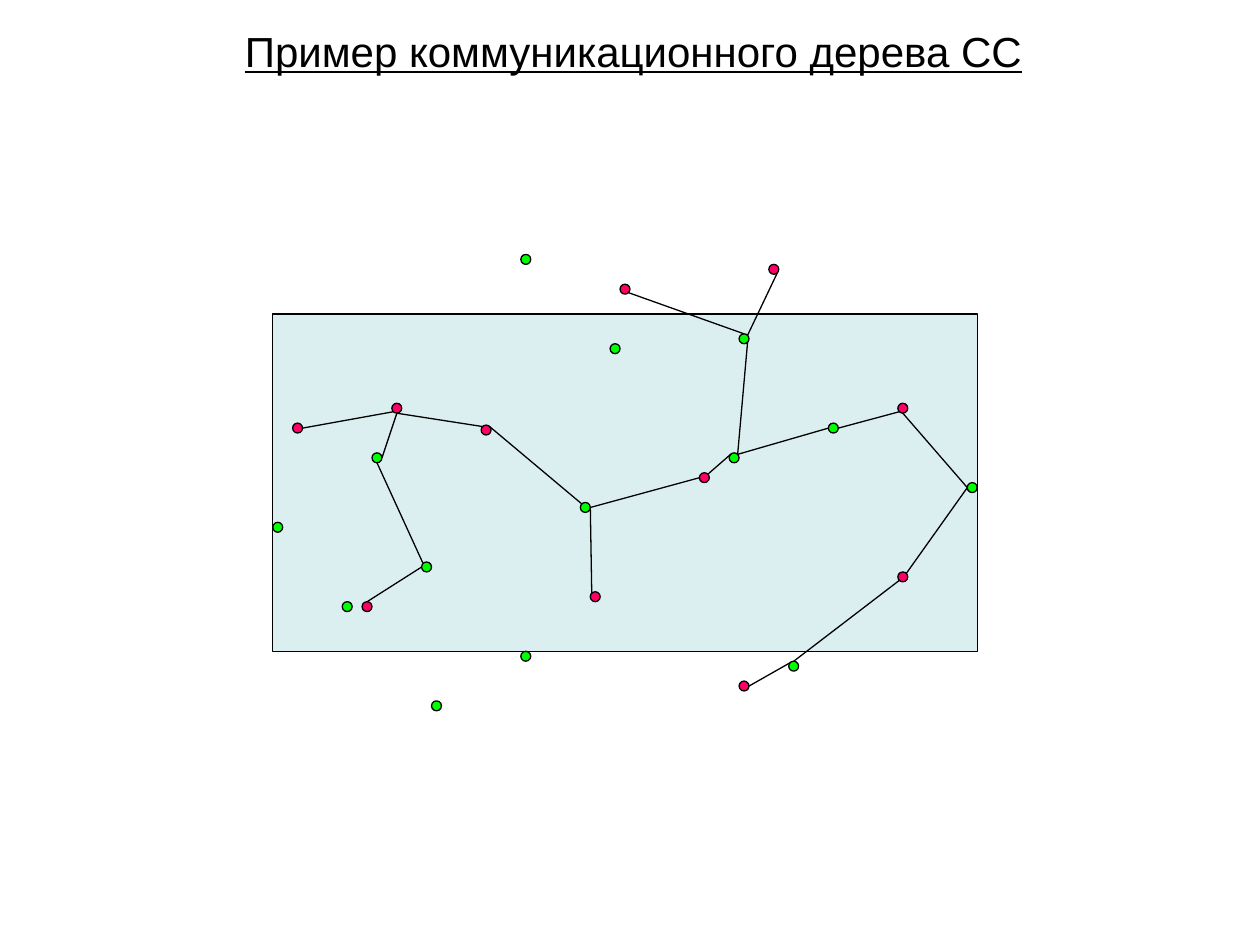
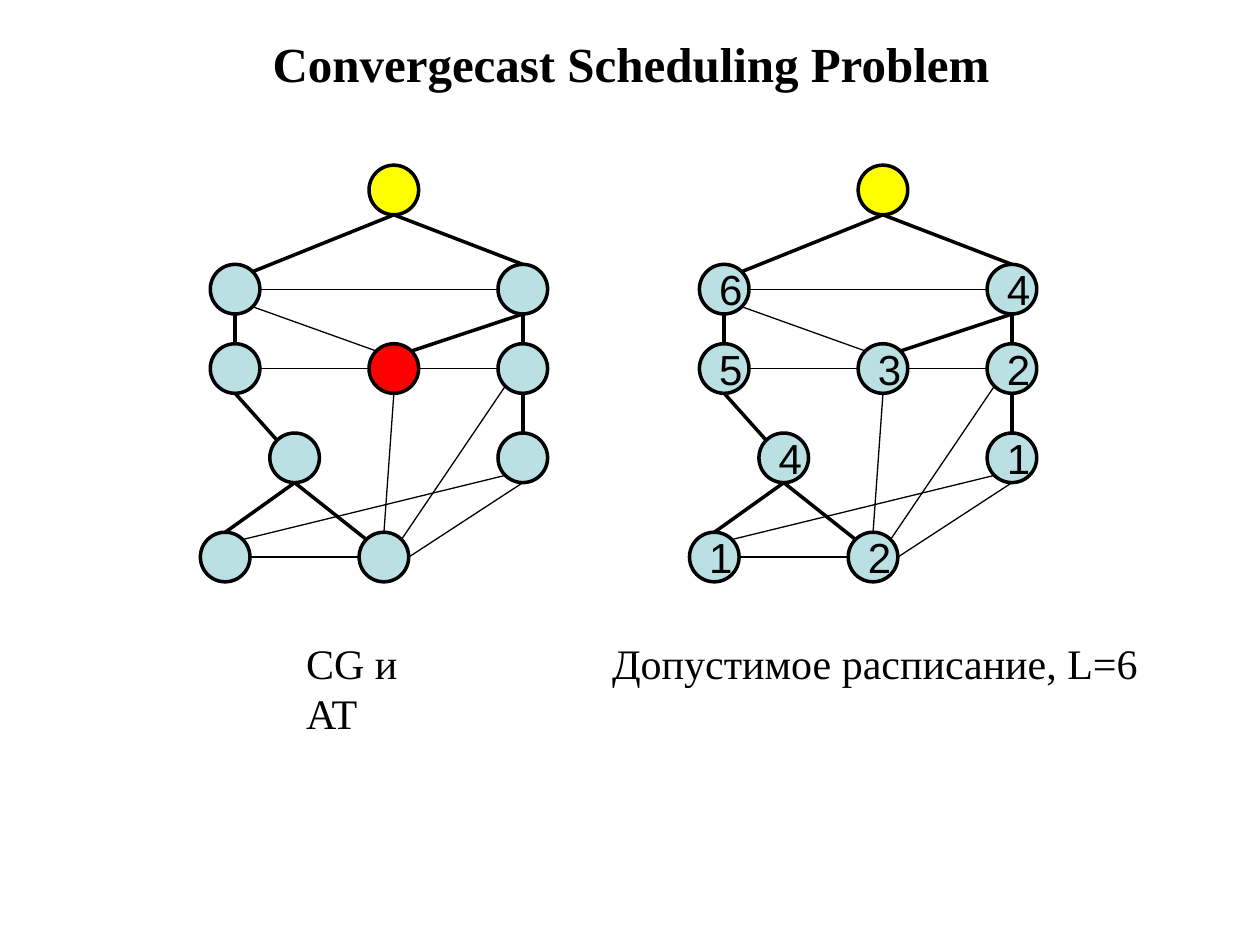
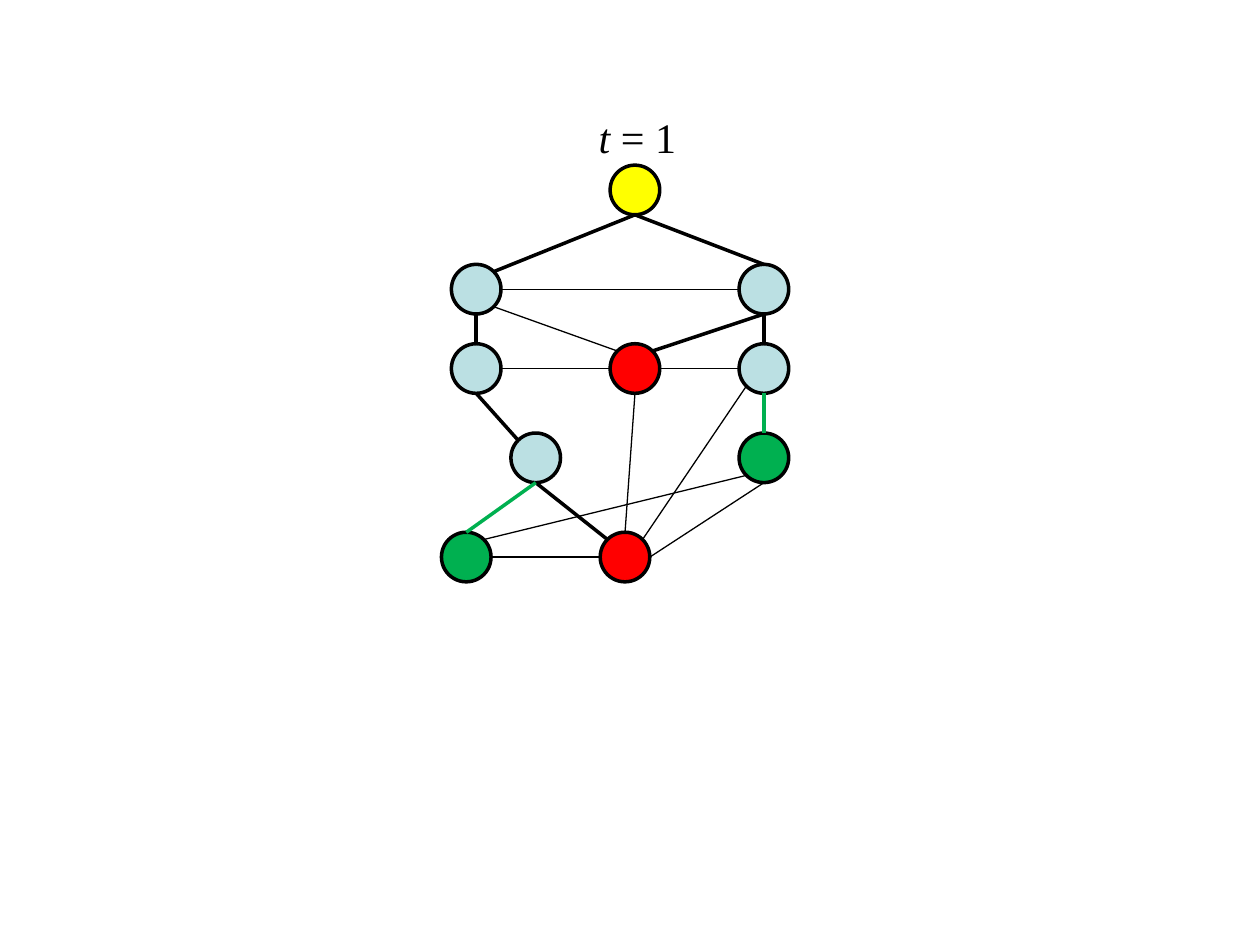
import dataclasses
import math

import lxml.etree
import pptx
import pptx.dml.color
import pptx.enum.shapes
import pptx.enum.text
import pptx.oxml.ns
import pptx.util

SHAPE = pptx.enum.shapes.MSO_SHAPE
ALIGN = pptx.enum.text.PP_ALIGN
QN = pptx.oxml.ns.qn


# Colours, fonts and sizes
@dataclasses.dataclass(frozen=True)
class Theme:
    ink: str = "000000"
    pale: str = "BBE0E3"
    pink: str = "FF0066"
    lime: str = "00FF00"
    red: str = "FF0000"
    green: str = "00B050"
    yellow: str = "FFFF00"
    sans: str = "Arial"
    serif: str = "Times New Roman"
    text: int = 24
    head: int = 28
    thin: float = 0.75
    thick: float = 2


# Eight points on the rim of a circle, as angles from the east
RIM = {name: math.radians(45 * step) for step, name in
       enumerate(("e", "se", "s", "sw", "w", "nw", "n", "ne"))}


class Deck:
    """Style, current slide and a grid of square cells, 127 across."""

    def __init__(self, theme):
        self.theme = theme
        self.show = pptx.Presentation()
        self.show.slide_width = pptx.util.Inches(10)
        self.show.slide_height = pptx.util.Inches(7.5)
        self.cell = self.show.slide_width / 127
        self.slide = None

    def grid(self, *cells):
        return [round(count * self.cell) for count in cells]

    def tint(self, name):
        return pptx.dml.color.RGBColor.from_string(name)

    def page(self):
        self.slide = self.show.slides.add_slide(self.show.slide_layouts[5])

    def font(self, para, face, size):
        para.font.name = face
        para.font.size = pptx.util.Pt(size)
        para.font.color.rgb = self.tint(self.theme.ink)

    def title(self, box, text, face, size, bold=False, under=False, slant=""):
        """Set the title; the opening words in slant are italic."""
        shape = self.slide.shapes.title
        shape.left, shape.top, shape.width, shape.height = self.grid(*box)
        frame = shape.text_frame
        frame.word_wrap = False
        frame.auto_size = pptx.enum.text.MSO_AUTO_SIZE.NONE
        frame.vertical_anchor = pptx.enum.text.MSO_ANCHOR.TOP
        para = frame.paragraphs[0]
        para.alignment = ALIGN.CENTER
        self.font(para, face, size)
        para.font.bold, para.font.underline = bold, under
        if slant:
            run = para.add_run()
            run.text, run.font.italic = slant, True
        para.add_run().text = text

    def label(self, box, text):
        frame = self.slide.shapes.add_textbox(*self.grid(*box)).text_frame
        frame.word_wrap = True
        frame.text = text
        self.font(frame.paragraphs[0], self.theme.serif, self.theme.text)

    def shape(self, kind, box, fill, width, text="", alpha=None):
        shape = self.slide.shapes.add_shape(kind, *self.grid(*box))
        shape.shadow.inherit = False
        shape.fill.solid()
        shape.fill.fore_color.rgb = self.tint(fill)
        shape.line.color.rgb = self.tint(self.theme.ink)
        shape.line.width = pptx.util.Pt(width)
        if alpha:
            tone = shape.fill._xPr.find(".//" + QN("a:srgbClr"))
            lxml.etree.SubElement(tone, QN("a:alpha"), val=str(alpha * 1000))
        if text:
            para = shape.text_frame.paragraphs[0]
            para.text = text
            para.alignment = ALIGN.CENTER
            self.font(para, self.theme.sans, self.theme.text)

    def line(self, start, end, width, hue):
        link = self.slide.shapes.add_connector(
            pptx.enum.shapes.MSO_CONNECTOR.STRAIGHT,
            *self.grid(*start, *end))
        link.line.color.rgb = self.tint(hue)
        link.line.width = pptx.util.Pt(width)
        lxml.etree.SubElement(link._element.spPr, QN("a:effectLst"))

    def nodes(self, origin, spots, size, fills, width, marks=None):
        """Draw circles and return the places of their corners."""
        corners = {}
        for name, (col, row) in spots.items():
            corners[name] = (origin[0] + col, origin[1] + row)
            self.shape(SHAPE.OVAL, (*corners[name], size, size),
                       fills[name], width, (marks or {}).get(name, ""))
        return corners

    def links(self, corners, size, edges, width, lit=()):
        """Join rim points, each written as node.side."""
        for edge in edges:
            ends = []
            for stop in edge.split():
                name, side = stop.split(".")
                left, top = corners[name]
                ends.append((left + size / 2 * (1 + math.cos(RIM[side])),
                             top + size / 2 * (1 + math.sin(RIM[side]))))
            hue = self.theme.green if edge in lit else self.theme.ink
            self.line(*ends, width, hue)


# Sensor field: p nodes are pink, g nodes are lime
FIELD = {
    "p1": (9, 35), "p2": (2, 17), "p3": (12, 15), "p4": (32, 34),
    "p5": (21, 17.2), "p6": (35, 3), "p7": (43, 22), "p8": (50, 1),
    "p9": (47, 43), "p10": (63, 32), "p11": (63, 15),
    "g1": (7, 35), "g2": (15, 31), "g3": (10, 20), "g4": (16, 45),
    "g5": (25, 40), "g6": (70, 23), "g7": (34, 9), "g8": (25, 0),
    "g9": (46, 20), "g10": (0, 27), "g11": (52, 41), "g12": (56, 17),
    "g13": (47, 8), "g14": (31, 25),
}
BRANCH = (
    "p3.s p5.nw", "p2.e p3.sw", "p4.nw g14.e", "g2.w p1.n",
    "g14.nw p5.ne", "g11.n p10.sw", "g13.n p6.se", "g13.ne p8.se",
    "g9.nw p7.ne", "p11.s g6.w", "g3.s g2.nw", "p3.s g3.e",
    "g13.se g9.ne", "g12.w g9.ne", "g12.e p11.sw", "g6.w p10.ne",
    "p9.e g11.nw", "g14.e p7.w",
)

# Conflict graph: tree edges are thick, conflict edges thin
GRAPH = {
    "root": (17, 0), "b": (1, 10), "c": (30, 10), "d": (1, 18),
    "e": (17, 18), "f": (30, 18), "g": (7, 27), "h": (30, 27),
    "i": (0, 37), "j": (16, 37),
}
TREE = (
    "root.s c.n", "root.s b.ne", "c.s f.n", "e.ne c.s", "b.s d.n",
    "f.s h.n", "d.s g.nw", "g.s j.nw", "g.s i.n",
)
CLASH = (
    "b.e c.w", "b.se e.nw", "e.e f.w", "j.e h.s", "j.ne f.sw",
    "e.s j.n", "d.e e.w", "j.w i.e", "i.ne h.sw",
)


def graph(deck, left, hues=None, marks=None, lit=()):
    look, size = deck.theme, 5
    fills = dict.fromkeys(GRAPH, look.pale)
    fills.update({"root": look.yellow}, **(hues or {}))
    corners = deck.nodes((left, 16.65), GRAPH, size, fills, look.thick, marks)
    deck.links(corners, size, CLASH, look.thin)
    deck.links(corners, size, TREE, look.thick, lit)


def main():
    look = Theme()
    deck = Deck(look)

    # Slide 1: communication tree
    deck.page()
    deck.title((23.4, 1.9, 80.9, 6.35), "Пример коммуникационного дерева СС",
               look.sans, look.text, under=True)
    left, top = 27.5, 25.65
    deck.shape(SHAPE.RECTANGLE, (left, top + 6, 71, 34), look.pale,
               look.thin, alpha=50)
    fills = {name: look.pink if name[0] == "p" else look.lime
             for name in FIELD}
    corners = deck.nodes((left, top), FIELD, 1, fills, look.thin)
    deck.links(corners, 1, BRANCH, look.thin)

    # Slide 2: graph and schedule
    deck.page()
    deck.title((25.8, 2.7, 75.6, 7.25), "Convergecast Scheduling Problem",
               look.serif, look.head, bold=True)
    graph(deck, 20.2, {"e": look.red})
    graph(deck, 69.5, marks=dict(zip("bcdefghij", "645324112")))
    deck.label((29.6, 63.6, 17.9, 6.35), "CG и AT")
    deck.label((60.45, 63.6, 56.15, 6.35), "Допустимое расписание, L=6")

    # Slide 3: first time step
    deck.page()
    deck.title((59.05, 10.65, 10.4, 6.35), "= 1", look.serif, look.text,
               slant="t ")
    graph(deck, 44.5,
          {"e": look.red, "j": look.red, "h": look.green, "i": look.green},
          lit=("f.s h.n", "g.s i.n"))

    deck.show.save("out.pptx")


if __name__ == "__main__":
    main()
